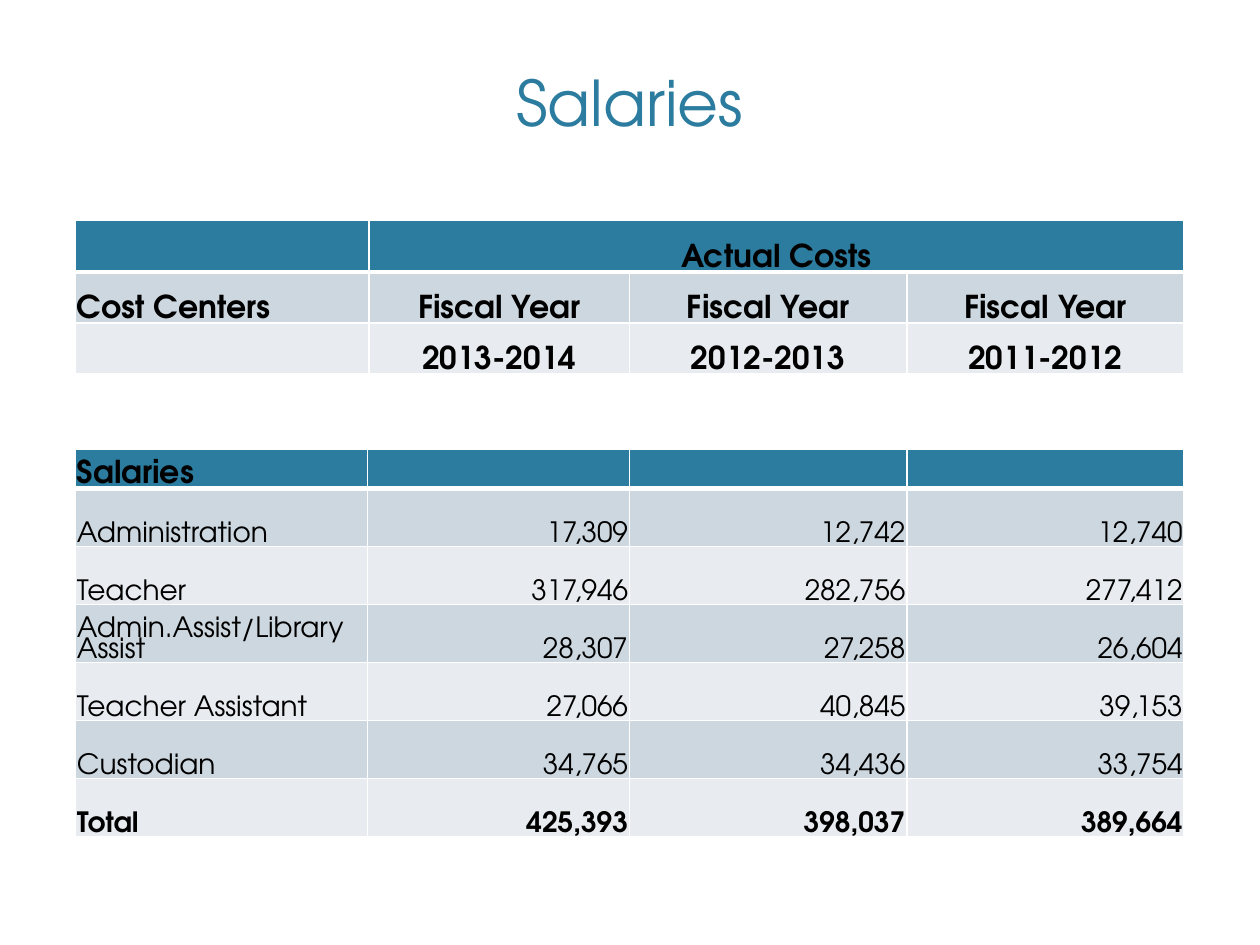
"""Build a slide with salary costs by fiscal year."""
import pptx
import pptx.dml.color
import pptx.enum.text
import pptx.util
from lxml import etree
from pptx.util import Cm

FONT = "TeX Gyre Adventor"
TEAL, BLACK, WHITE = "2C7C9F", "000000", "FFFFFF"
BANDS = ["E8ECF0", "CDD7DF"]
NAMESPACE = "http://schemas.openxmlformats.org/drawingml/2006/main"
ALIGN = pptx.enum.text.PP_ALIGN
ANCHOR = pptx.enum.text.MSO_ANCHOR


def color(value):
    return pptx.dml.color.RGBColor.from_string(value)


def set_font(paragraph, size, value, bold=False):
    paragraph.font.name = FONT
    paragraph.font.size = pptx.util.Pt(size)
    paragraph.font.bold = bold
    paragraph.font.color.rgb = color(value)


presentation = pptx.Presentation()
presentation.slide_width = Cm(25.4)
presentation.slide_height = Cm(19.05)
slide = presentation.slides.add_slide(presentation.slide_layouts[6])

title = slide.shapes.add_textbox(Cm(1.52), Cm(0.76), Cm(22.35), Cm(2.16))
title.text_frame.word_wrap = True
title.text_frame.vertical_anchor = ANCHOR.BOTTOM
title_paragraph = title.text_frame.paragraphs[0]
title_paragraph.text = "Salaries"
title_paragraph.alignment = ALIGN.CENTER
set_font(title_paragraph, 36, TEAL)

heading_rows = [
    ["", "Actual Costs", "", ""],
    ["Cost Centers", "Fiscal Year", "Fiscal Year", "Fiscal Year"],
    ["", "2013-2014", "2012-2013", "2011-2012"],
]
salary_rows = [
    ["Salaries", "", "", ""],
    ["Administration", "17,309", "12,742", "12,740"],
    ["Teacher", "317,946", "282,756", "277,412"],
    ["Admin.Assist/Library Assist", "28,307", "27,258", "26,604"],
    ["Teacher Assistant", "27,066", "40,845", "39,153"],
    ["Custodian", "34,765", "34,436", "33,754"],
    ["Total", "425,393", "398,037", "389,664"],
]
tables = [
    (heading_rows, 4.45, [5.92, 5.25, 5.59, 5.59], [1.03] * 3, ALIGN.CENTER, 18, {0, 1, 2}),
    (salary_rows, 9.05, [5.89, 5.28, 5.59, 5.59], [0.61] + [1.17] * 6, ALIGN.RIGHT, 16, {0, 6}),
]

for rows, top, widths, heights, alignment, body_size, bold_rows in tables:
    table = slide.shapes.add_table(
        len(rows), len(widths), Cm(1.52), Cm(top), Cm(sum(widths)), Cm(sum(heights))
    ).table
    for column, width in zip(table.columns, widths):
        column.width = Cm(width)
    for row_index, (texts, height) in enumerate(zip(rows, heights)):
        table.rows[row_index].height = Cm(height)
        header = row_index == 0
        borders = {"lnL": 1, "lnR": 1, "lnT": 1, "lnB": 3 if header else 1}
        if row_index == 1:
            del borders["lnT"]
        for column_index, text in enumerate(texts):
            cell = table.cell(row_index, column_index)
            cell.margin_left = cell.margin_right = cell.margin_top = Cm(0.03)
            cell.margin_bottom = 0
            cell.vertical_anchor = ANCHOR.BOTTOM
            properties = cell._tc.get_or_add_tcPr()
            for side, points in borders.items():
                line = etree.SubElement(
                    properties, f"{{{NAMESPACE}}}{side}", w=str(pptx.util.Pt(points))
                )
                fill = etree.SubElement(line, f"{{{NAMESPACE}}}solidFill")
                etree.SubElement(fill, f"{{{NAMESPACE}}}srgbClr", val=WHITE)
            cell.fill.solid()
            cell.fill.fore_color.rgb = color(TEAL if header else BANDS[row_index % 2])
            paragraph = cell.text_frame.paragraphs[0]
            paragraph.text = text
            paragraph.alignment = alignment if column_index else ALIGN.LEFT
            paragraph.line_spacing = 0.8
            set_font(paragraph, 18 if header else body_size, BLACK, row_index in bold_rows)
    if rows is heading_rows:
        table.cell(0, 1).merge(table.cell(0, 3))

presentation.save("out.pptx")
